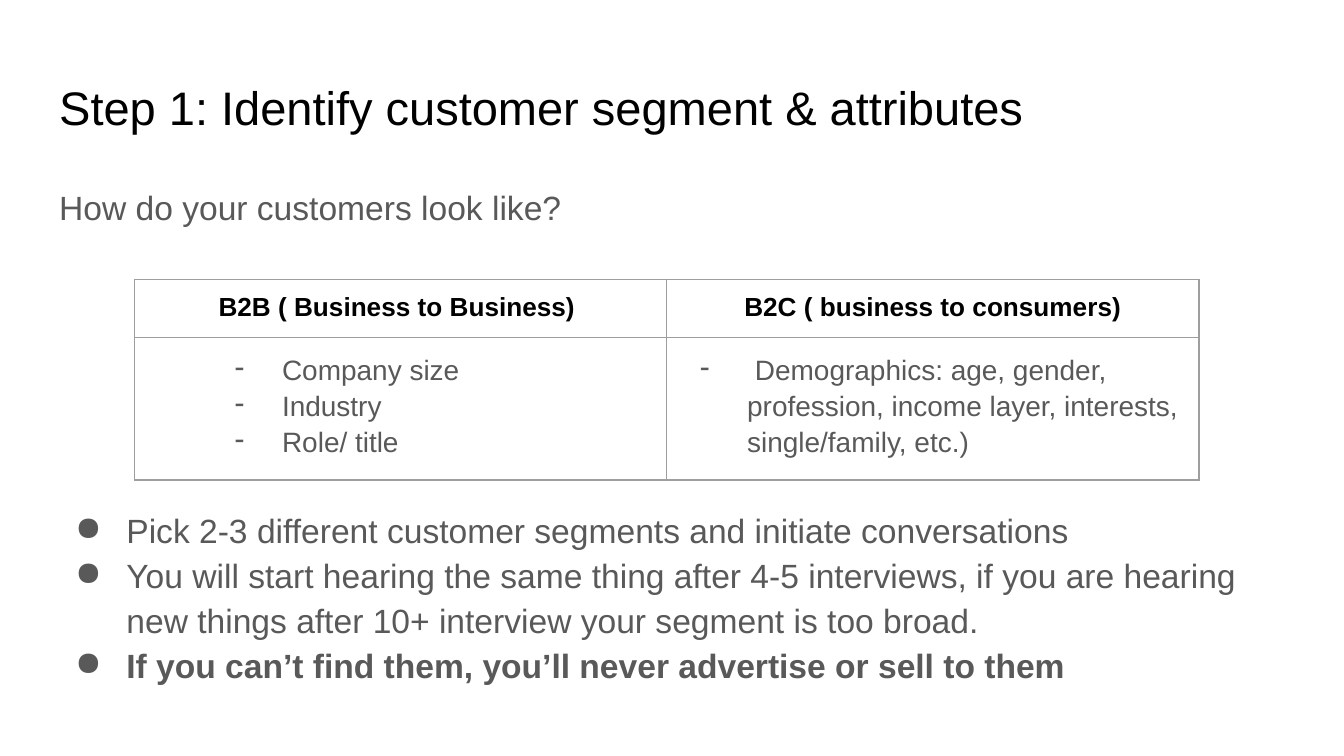
"""Build the customer segment slide with its B2B and B2C table."""
import pptx
import pptx.dml.color
import pptx.enum.text
import pptx.oxml
import pptx.oxml.ns
import pptx.util

Cm, Pt = pptx.util.Cm, pptx.util.Pt
RGBColor = pptx.dml.color.RGBColor
BLACK = RGBColor(0x00, 0x00, 0x00)
GRAY = RGBColor(0x59, 0x59, 0x59)
BORDER = RGBColor(0x9E, 0x9E, 0x9E)
CENTER = pptx.enum.text.PP_ALIGN.CENTER
NS = pptx.oxml.ns.nsdecls("a")
INSET = Cm(0.25)
MARGINS = ("margin_left", "margin_top", "margin_right", "margin_bottom")


def add_line(tf, text, font, layout, bullet=None):
    p = tf.paragraphs[0]
    if p.runs:
        p = tf.add_paragraph()
    for name, value in layout.items():
        setattr(p, name, value)
    r = p.add_run()
    r.text = text
    for name, value in font.items():
        if name == "color":
            r.font.color.rgb = value
        else:
            setattr(r.font, name, value)
    if bullet:
        char, left, hanging = bullet
        pPr = p._p.get_or_add_pPr()
        pPr.set("marL", str(Cm(left)))
        pPr.set("indent", str(-Cm(hanging)))
        for xml in (f'<a:buClr {NS}><a:srgbClr val="{GRAY}"/></a:buClr>',
                    f'<a:buChar {NS} char="{char}"/>'):
            pPr.append(pptx.oxml.parse_xml(xml))


prs = pptx.Presentation()
prs.slide_width, prs.slide_height = Cm(25.4), Cm(14.29)
s = prs.slides.add_slide(prs.slide_layouts[6])

title = {"name": "Arial", "size": Pt(25.2), "color": BLACK}
body = {"name": "Arial", "size": Pt(18), "color": GRAY}
header = {"name": "Arial", "size": Pt(14), "color": BLACK, "bold": True}
item = {"name": "Arial", "size": Pt(15), "color": GRAY, "bold": False}
loose = {"line_spacing": 1.12}
dot = ("●", 1.27, 0.97)

boxes = [
    (1.24, 1.6, [("Step 1: Identify customer segment & attributes", title, {}, None)]),
    (3.2, 1.4, [("How do your customers look like?", body, loose, None)]),
    (9.3, 4.26, [
        ("Pick 2-3 different customer segments and initiate conversations", body, loose, dot),
        ("You will start hearing the same thing after 4-5 interviews, if you are hearing "
         "new things after 10+ interview your segment is too broad.", body, loose, dot),
        ("If you can’t find them, you’ll never advertise or sell to them",
         {**body, "bold": True}, loose, dot),
    ]),
]
for top, height, lines in boxes:
    tf = s.shapes.add_textbox(Cm(0.87), Cm(top), Cm(23.67), Cm(height)).text_frame
    tf.word_wrap = True
    for name in MARGINS:
        setattr(tf, name, INSET)
    for line in lines:
        add_line(tf, *line)

columns = [
    ("B2B ( Business to Business) ", 2.54, ["Company size", "Industry", "Role/ title"]),
    ("B2C ( business to consumers)", 1.27,
     [" Demographics: age, gender, profession, income layer, interests, single/family, etc.)"]),
]
table = s.shapes.add_table(2, 2, Cm(2.54), Cm(5.29), Cm(20.12), Cm(3.6)).table
table.first_row = table.horz_banding = False
table.rows[0].height, table.rows[1].height = Cm(1.07), Cm(2.53)
for col, (heading, left, items) in enumerate(columns):
    table.columns[col].width = Cm(10.06)
    add_line(table.cell(0, col).text_frame, heading, header, {"alignment": CENTER})
    for text in items:
        add_line(table.cell(1, col).text_frame, text, item,
                 {"line_spacing": 1.15}, ("-", left, 0.89))

for cell in table.iter_cells():
    for name in MARGINS:
        setattr(cell, name, INSET)
    tcPr = cell._tc.get_or_add_tcPr()
    for side in ("lnL", "lnR", "lnT", "lnB"):
        tcPr.append(pptx.oxml.parse_xml(
            f'<a:{side} {NS} w="{Pt(0.75)}"><a:solidFill><a:srgbClr val="{BORDER}"/>'
            f'</a:solidFill></a:{side}>'))
    cell.fill.background()

prs.save("out.pptx")
